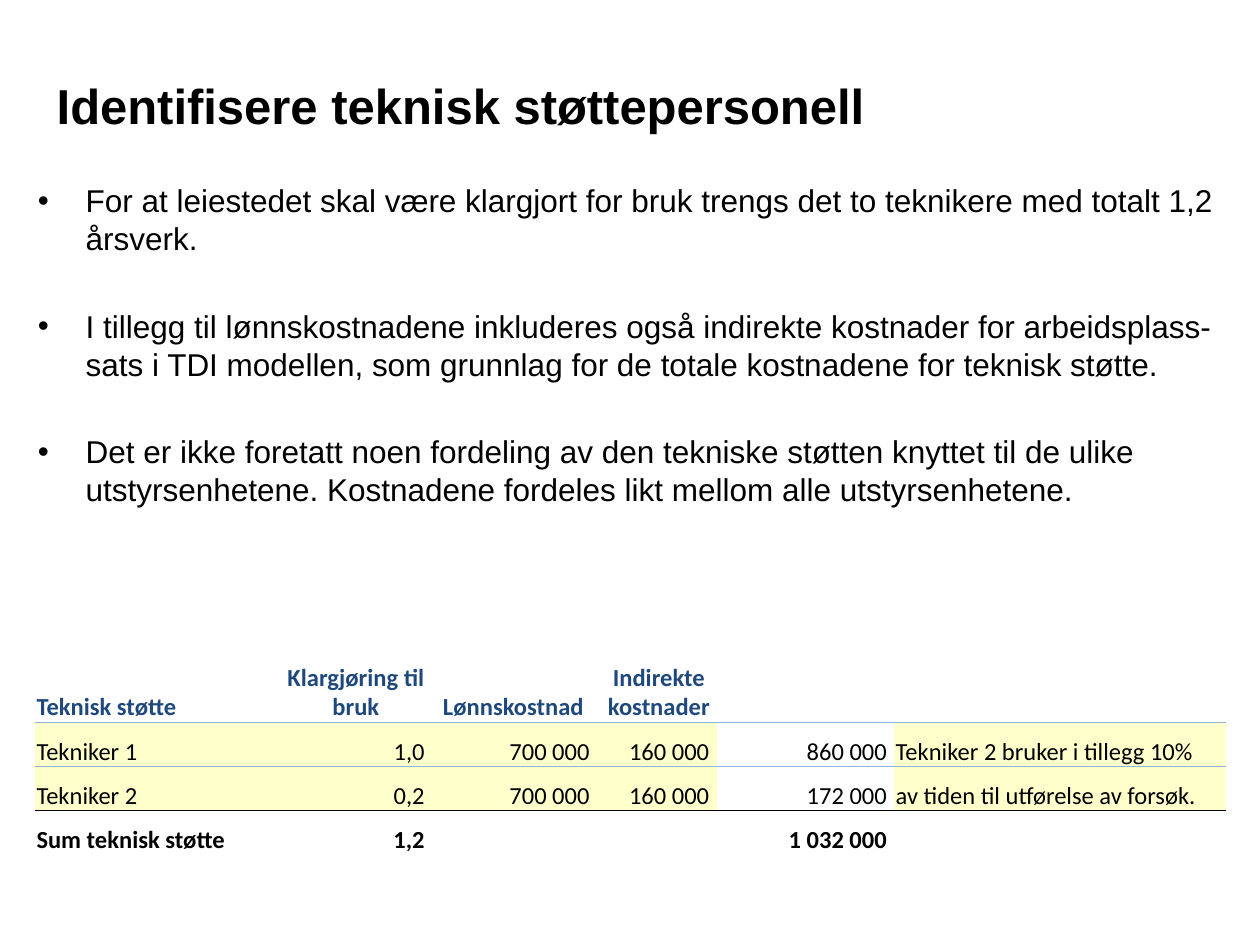
from pptx import Presentation
from pptx.dml.color import RGBColor
from pptx.enum.text import MSO_ANCHOR, MSO_AUTO_SIZE, PP_ALIGN
from pptx.oxml import parse_xml
from pptx.oxml.ns import nsdecls, qn
from pptx.util import Inches, Pt

BLACK = RGBColor(0x00, 0x00, 0x00)
NAVY = RGBColor(0x1F, 0x49, 0x7D)
LIGHT_BLUE = RGBColor(0x95, 0xB3, 0xD7)
YELLOW = RGBColor(0xFF, 0xFF, 0xCC)
NO_STYLE = "{2D5ABB26-0587-4C30-8999-92F81FD0307C}"

TITLE = "Identifisere teknisk støttepersonell"
BULLETS = [
    "For at leiestedet skal være klargjort for bruk trengs det to teknikere med totalt 1,2 årsverk.",
    "I tillegg til lønnskostnadene inkluderes også indirekte kostnader for arbeidsplass-sats "
    "i TDI modellen, som grunnlag for de totale kostnadene for teknisk støtte.",
    "Det er ikke foretatt noen fordeling av den tekniske støtten knyttet til de ulike "
    "utstyrsenhetene. Kostnadene fordeles likt mellom alle utstyrsenhetene.",
]
ROWS = [
    ["Teknisk støtte", "Klargjøring til bruk", "Lønnskostnad", "Indirekte kostnader", "", ""],
    ["Tekniker 1", "1,0", "700 000", "160 000", "860 000", "Tekniker 2 bruker i tillegg 10%"],
    ["Tekniker 2", "0,2", "700 000", "160 000", "172 000", "av tiden til utførelse av forsøk."],
    ["Sum teknisk støtte", "1,2", "", "", "1 032 000", ""],
]
ROW_HEIGHTS = [0.47, 0.35, 0.35, 0.35]
HEADER, SUM = 0, len(ROWS) - 1
# width, alignment of the values, right margin of the values
COLUMNS = [
    (1.99, PP_ALIGN.LEFT, 0.01),
    (1.11, PP_ALIGN.RIGHT, 0.01),
    (1.39, PP_ALIGN.RIGHT, 0.09),
    (0.92, PP_ALIGN.RIGHT, 0.06),
    (1.41, PP_ALIGN.RIGHT, 0.06),
    (2.63, PP_ALIGN.LEFT, 0.01),
]
TOTAL_COLUMN = 4
# row above the rule: colour, width in points
RULES = {HEADER: (LIGHT_BLUE, 1), SUM - 1: (BLACK, 0.5)}


def write(para, text, font="Arial", size=18, color=BLACK, bold=False, align=PP_ALIGN.LEFT):
    para.alignment = align
    span = para.add_run()
    span.text = text
    span.font.name = font
    span.font.size = Pt(size)
    span.font.bold = bold
    span.font.color.rgb = color


def place(shape, left, top, width, height):
    shape.left, shape.top = Inches(left), Inches(top)
    shape.width, shape.height = Inches(width), Inches(height)
    shape.text_frame.auto_size = MSO_AUTO_SIZE.NONE


def add_bullet(para):
    properties = para._p.get_or_add_pPr()
    properties.set("marL", str(Inches(0.38)))
    properties.set("indent", str(-Inches(0.38)))
    properties.append(parse_xml(f'<a:buChar {nsdecls("a")} char="•"/>'))


def add_border(cell, side, color, width):
    cell._tc.get_or_add_tcPr().insert(0, parse_xml(
        f'<a:{side} {nsdecls("a")} w="{Pt(width)}"><a:solidFill>'
        f'<a:srgbClr val="{color}"/></a:solidFill></a:{side}>'))


def fill_table(table):
    table.first_row = table.horz_banding = False
    table._tbl.tblPr.find(qn("a:tableStyleId")).text = NO_STYLE
    for row, height in zip(table.rows, ROW_HEIGHTS):
        row.height = Inches(height)
    for c, (width, align, right) in enumerate(COLUMNS):
        table.columns[c].width = Inches(width)
        for r, values in enumerate(ROWS):
            cell = table.cell(r, c)
            is_header = r == HEADER
            cell.vertical_anchor = MSO_ANCHOR.BOTTOM
            cell.margin_left = cell.margin_top = Inches(0.01)
            cell.margin_right = Inches(0.01 if is_header else right)
            cell.margin_bottom = 0
            if HEADER < r < SUM and c != TOTAL_COLUMN:
                cell.fill.solid()
                cell.fill.fore_color.rgb = YELLOW
            else:
                cell.fill.background()
            if r in RULES:
                add_border(cell, "lnB", *RULES[r])
            if r - 1 in RULES:
                add_border(cell, "lnT", *RULES[r - 1])
            if values[c]:
                write(cell.text_frame.paragraphs[0], values[c], font="Calibri", size=14,
                      color=NAVY if is_header else BLACK, bold=r in (HEADER, SUM),
                      align=PP_ALIGN.CENTER if is_header and c else align)


def main():
    deck = Presentation()
    deck.slide_width, deck.slide_height = Inches(10), Inches(7.5)
    page = deck.slides.add_slide(deck.slide_layouts[1])

    title = page.shapes.title
    place(title, 0.35, 0.21, 8.5, 1.25)
    title.text_frame.vertical_anchor = MSO_ANCHOR.MIDDLE
    write(title.text_frame.paragraphs[0], TITLE, size=28, bold=True)

    body = page.placeholders[1]
    place(body, 0.2, 1.39, 9.53, 3.46)
    frame = body.text_frame
    for i, text in enumerate(BULLETS):
        para = frame.add_paragraph() if i else frame.paragraphs[0]
        para.space_before = Pt(28.5 if i else 0)
        add_bullet(para)
        write(para, text)

    holder = page.shapes.add_table(len(ROWS), len(COLUMNS), Inches(0.28), Inches(5.25),
                                   Inches(9.45), Inches(sum(ROW_HEIGHTS)))
    fill_table(holder.table)
    deck.save("out.pptx")


if __name__ == "__main__":
    main()
